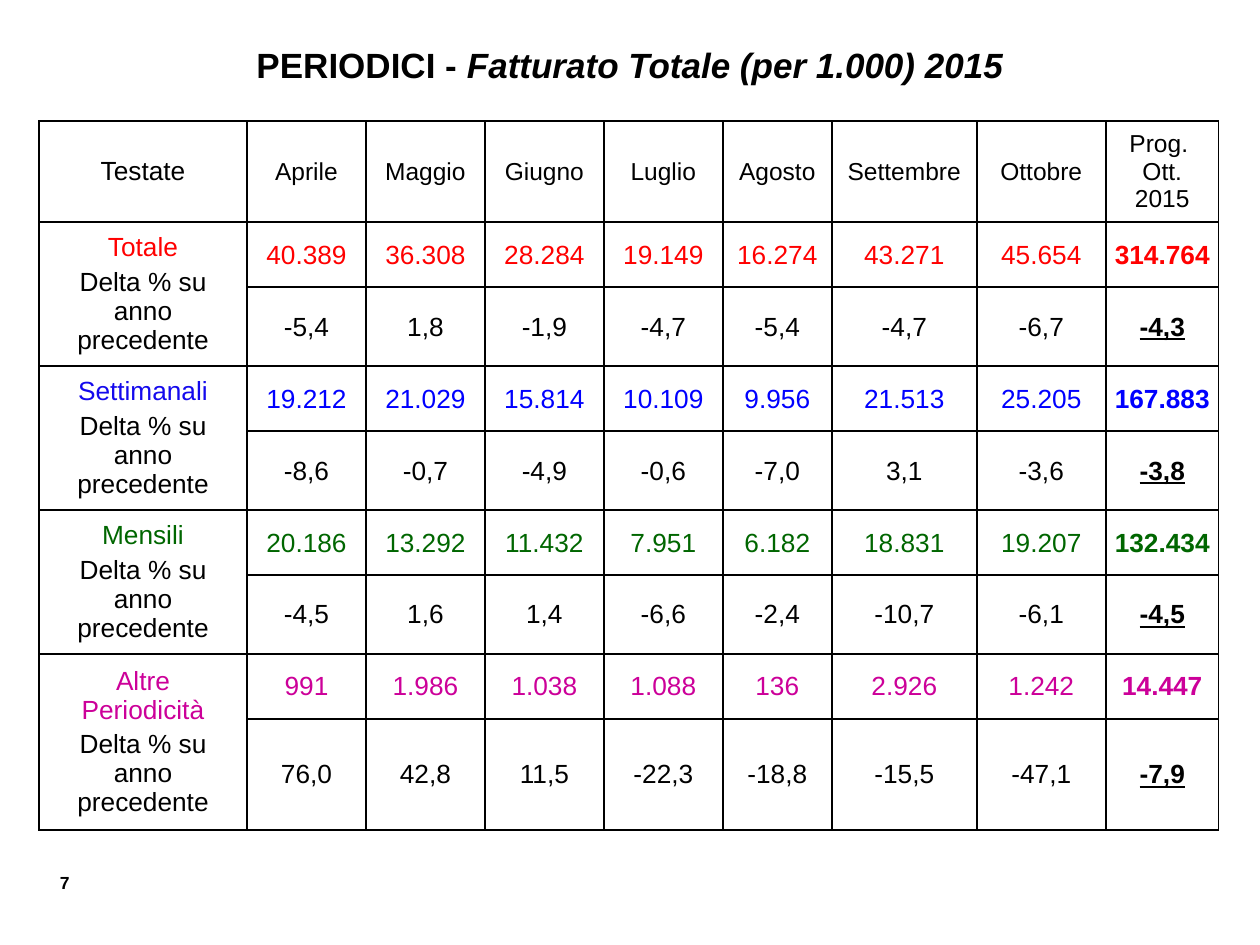
from dataclasses import dataclass

from lxml import etree
from pptx import Presentation
from pptx.dml.color import RGBColor
from pptx.enum.text import MSO_ANCHOR, MSO_AUTO_SIZE, PP_ALIGN
from pptx.oxml.ns import qn
from pptx.util import Emu, Pt

MIDDLE = MSO_ANCHOR.MIDDLE
CENTER, RIGHT = PP_ALIGN.CENTER, PP_ALIGN.RIGHT
NO_FIT = MSO_AUTO_SIZE.NONE
SCALE = 914400 / 126  # EMU per px


@dataclass(frozen=True)
class Theme:
    font: str = "Arial"
    black: str = "000000"
    white: str = "FFFFFF"
    red: str = "FF0000"
    blue: str = "0000FF"
    indigo: str = "1409ED"
    green: str = "006600"
    pink: str = "CC0099"
    title: int = 20
    body: int = 15
    head: int = 14
    foot: int = 10


THEME = Theme()
COLS = [208, 119, 119, 119, 119, 109, 145, 129, 113]
ROWS = [101, 65, 79, 65, 79, 65, 79, 65, 111]
WIDE, SNUG, EVEN = (13, 6, 13, 6), (1, 1, 1, 0), (6, 6, 6, 6)

HEADS = ["Testate", "Aprile", "Maggio", "Giugno", "Luglio", "Agosto",
         "Settembre", "Ottobre", "Prog. \nOtt.\n2015"]
DELTA = "Delta % su anno precedente"
# name, name colour, value colour, values, deltas
GROUPS = [
    ("Totale", THEME.red, THEME.red,
     "40.389 36.308 28.284 19.149 16.274 43.271 45.654 314.764",
     "-5,4 1,8 -1,9 -4,7 -5,4 -4,7 -6,7 -4,3"),
    ("Settimanali", THEME.indigo, THEME.blue,
     "19.212 21.029 15.814 10.109 9.956 21.513 25.205 167.883",
     "-8,6 -0,7 -4,9 -0,6 -7,0 3,1 -3,6 -3,8"),
    ("Mensili", THEME.green, THEME.green,
     "20.186 13.292 11.432 7.951 6.182 18.831 19.207 132.434",
     "-4,5 1,6 1,4 -6,6 -2,4 -10,7 -6,1 -4,5"),
    ("Altre Periodicità", THEME.pink, THEME.pink,
     "991 1.986 1.038 1.088 136 2.926 1.242 14.447",
     "76,0 42,8 11,5 -22,3 -18,8 -15,5 -47,1 -7,9"),
]


def px(n):
    return Emu(round(n * SCALE))


def write(para, text, size=THEME.body, color=THEME.black, bold=False,
          italic=False, under=False, align=CENTER, before=0):
    """Add one formatted run to a paragraph."""
    para.alignment = align
    if before:
        para.space_before = Pt(before)
    run = para.add_run()
    run.text = text
    font = run.font
    font.name, font.size = THEME.font, Pt(size)
    font.bold, font.italic, font.underline = bold, italic, under
    font.color.rgb = RGBColor.from_string(color)


def edge(cell):
    """Draw a thin black line on all four sides of a cell."""
    props = cell._tc.get_or_add_tcPr()
    for side in ("lnL", "lnR", "lnT", "lnB"):
        line = etree.SubElement(props, qn(f"a:{side}"), w=str(Pt(1)))
        fill = etree.SubElement(line, qn("a:solidFill"))
        etree.SubElement(fill, qn("a:srgbClr"), val=THEME.black)


def style(cell):
    edge(cell)
    cell.fill.solid()
    cell.fill.fore_color.rgb = RGBColor.from_string(THEME.white)
    cell.vertical_anchor = MIDDLE


def pad(cell, sides):
    (cell.margin_left, cell.margin_top,
     cell.margin_right, cell.margin_bottom) = map(px, sides)


def add_title(slide, x, y, w, h):
    title = slide.shapes.title
    title.left, title.top, title.width, title.height = map(px, (x, y, w, h))
    frame = title.text_frame
    frame.auto_size = NO_FIT
    frame.vertical_anchor = MIDDLE
    para = frame.paragraphs[0]
    write(para, "PERIODICI - ", size=THEME.title, bold=True)
    write(para, "Fatturato Totale (per 1.000) 2015",
          size=THEME.title, bold=True, italic=True)


def fill_head(table):
    for col, text in enumerate(HEADS):
        cell = table.cell(0, col)
        pad(cell, WIDE if col else EVEN)
        frame = cell.text_frame
        for i, line in enumerate(text.split("\n")):
            para = frame.add_paragraph() if i else frame.paragraphs[0]
            write(para, line, size=THEME.head if col else THEME.body)


def fill_group(table, row, name, tint, color, values, deltas):
    """Fill a pair of rows: values above, yearly change below."""
    label = table.cell(row, 0)
    label.merge(table.cell(row + 1, 0))
    pad(label, WIDE)
    frame = label.text_frame
    write(frame.paragraphs[0], name, color=tint)
    write(frame.add_paragraph(), DELTA, before=3)
    for step, (line, shade) in enumerate(((values, color),
                                          (deltas, THEME.black))):
        for col, text in enumerate(line.split(), 1):
            cell = table.cell(row + step, col)
            pad(cell, SNUG)
            last = col == len(COLS) - 1
            write(cell.text_frame.paragraphs[0], text, color=shade,
                  bold=last, under=last and step == 1)


def add_grid(slide, x, y):
    box = map(px, (x, y, sum(COLS), sum(ROWS)))
    table = slide.shapes.add_table(len(ROWS), len(COLS), *box).table
    table.first_row = table.horz_banding = False
    for col, width in zip(table.columns, COLS):
        col.width = px(width)
    for row, height in zip(table.rows, ROWS):
        row.height = px(height)
    for cell in table.iter_cells():
        style(cell)
    fill_head(table)
    for i, group in enumerate(GROUPS):
        fill_group(table, 1 + 2 * i, *group)


def add_number(slide, x, y, w, h):
    frame = slide.shapes.add_textbox(*map(px, (x, y, w, h))).text_frame
    frame.word_wrap = True
    write(frame.paragraphs[0], "7", size=THEME.foot, bold=True, align=RIGHT)


def main():
    deck = Presentation()
    deck.slide_width, deck.slide_height = px(1260), px(945)
    slide = deck.slides.add_slide(deck.slide_layouts[5])
    add_title(slide, 0, 37, 1260, 55)
    add_grid(slide, 39, 121)
    add_number(slide, 24, 866, 58, 34)
    deck.save("out.pptx")


if __name__ == "__main__":
    main()
